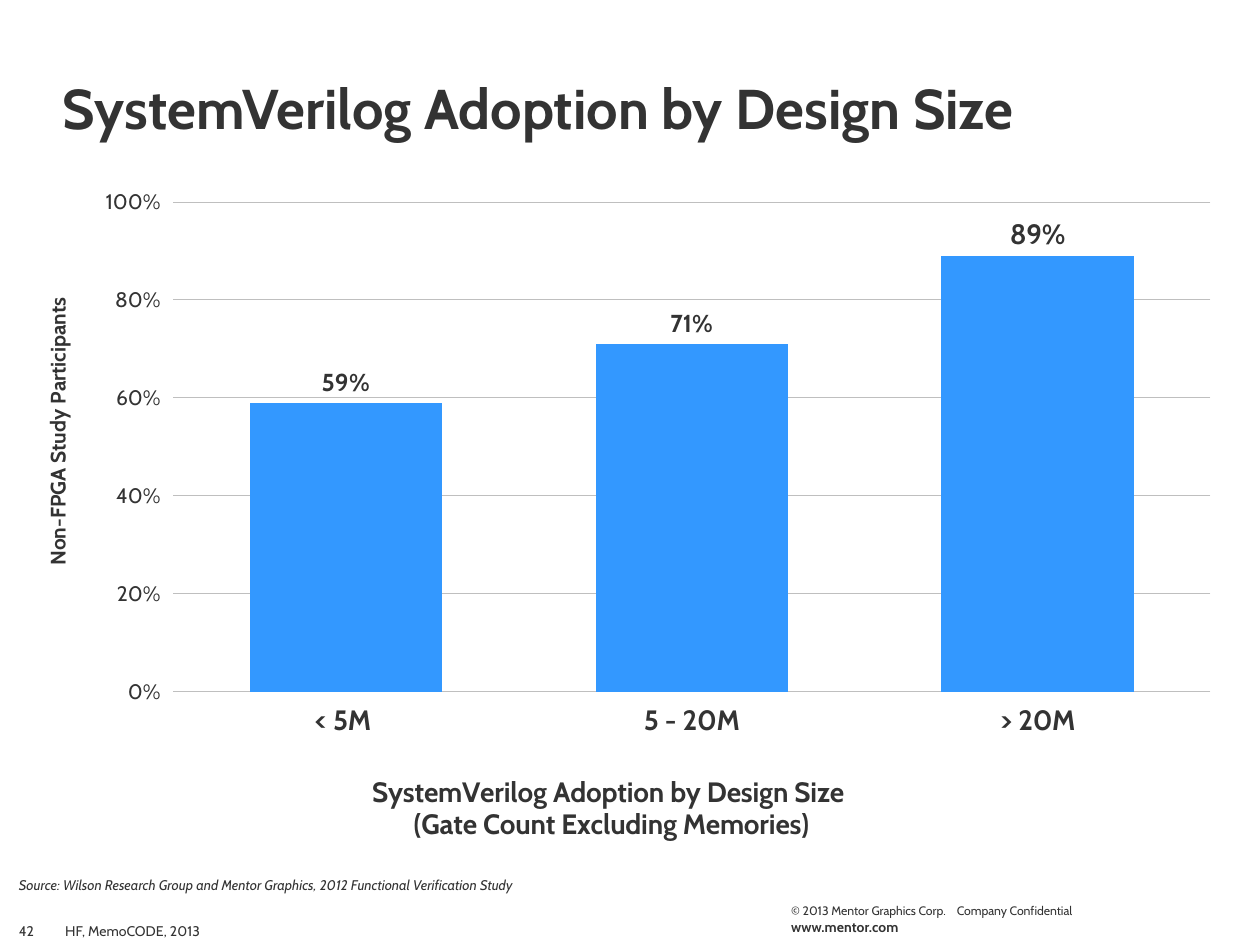
from dataclasses import dataclass

from lxml.etree import SubElement
from pptx import Presentation
from pptx.chart.data import CategoryChartData
from pptx.dml.color import RGBColor
from pptx.enum.chart import XL_CHART_TYPE as ChartType, XL_LABEL_POSITION as LabelPos
from pptx.enum.text import MSO_ANCHOR as Anchor, PP_ALIGN as Align
from pptx.oxml.ns import qn
from pptx.util import Pt

FONT = "Cabin"
COLORS = {"text": "333333", "bar": "3398FF", "grid": "BFBFBF"}


@dataclass
class Label:
    text: str
    left: float
    top: float
    width: float
    height: float
    size: float = 8
    bold: bool = False
    italic: bool = False
    anchor: Anchor = Anchor.BOTTOM
    align: Align = Align.LEFT
    inset: float = 7.2


LABELS = [
    Label("www.mentor.com", 445, 521.3, 113.8, 16.6, bold=True, anchor=Anchor.TOP),
    Label("© 2013 Mentor Graphics Corp.    Company Confidential", 445, 512.6, 190.8, 15.8,
          size=7, anchor=Anchor.TOP),
    Label("SystemVerilog Adoption by Design Size", 0, 0, 720, 84.2,
          size=32, bold=True, inset=36),
    Label("Source: Wilson Research Group and Mentor Graphics, 2012 Functional Verification Study",
          0, 496.8, 426.2, 17.3, italic=True, inset=10.8),
    Label("HF, MemoCODE, 2013", 30.2, 522, 410.4, 18),
    Label("42", 0, 522, 30.2, 18, align=Align.CENTER),
]


def rgb(name: str) -> RGBColor:
    return RGBColor.from_string(COLORS[name])


def style_font(font, size: float, bold: bool = False, italic: bool = False) -> None:
    font.name, font.size, font.bold, font.italic = FONT, Pt(size), bold, italic
    font.color.rgb = rgb("text")


def add_label(slide, label: Label) -> None:
    box = slide.shapes.add_textbox(Pt(label.left), Pt(label.top), Pt(label.width), Pt(label.height))
    tf = box.text_frame
    tf.word_wrap = True
    tf.vertical_anchor = label.anchor
    tf.margin_left = tf.margin_right = Pt(label.inset)
    p = tf.paragraphs[0]
    p.text = label.text
    p.alignment = label.align
    style_font(p.font, label.size, label.bold, label.italic)


def set_layout(element, index: int, **values) -> None:
    """Place a chart part by fractions of the chart's size."""
    for old in element.findall(qn("c:layout")):
        element.remove(old)
    layout = SubElement(element, qn("c:layout"))
    element.insert(index, layout)
    manual = SubElement(layout, qn("c:manualLayout"))
    for tag, value in values.items():
        SubElement(manual, qn(f"c:{tag}")).set("val", str(value))


def set_axis_title(axis, lines: list[str], size: float, x: float, y: float):
    title = axis.axis_title
    tf = title.text_frame
    tf.text = "\n".join(lines)
    for p in tf.paragraphs:
        p.alignment = Align.CENTER
        style_font(p.font, size, bold=True)
    set_layout(title._element, 1, xMode="edge", yMode="edge", x=x, y=y)
    return tf


def add_adoption_chart(slide) -> None:
    data = CategoryChartData(number_format="0%")
    data.categories = ["< 5M ", "5 - 20M", "> 20M"]
    data.add_series("Series 1", [0.59, 0.71, 0.89])
    chart = slide.shapes.add_chart(ChartType.COLUMN_CLUSTERED, Pt(12.2), Pt(100.8),
                                   Pt(693.4), Pt(385.2), data).chart
    chart.has_legend = chart.has_title = False
    style_font(chart.font, 10)
    plot_area = chart._chartSpace.chart.plotArea
    set_layout(plot_area, 0, layoutTarget="inner", xMode="edge", yMode="edge",
               x=0.125, y=0.038, w=0.855, h=0.727)

    cat, val = chart.category_axis, chart.value_axis
    for axis, size, bold in ((cat, 16, True), (val, 12, False)):
        axis.format.line.fill.background()
        style_font(axis.tick_labels.font, size, bold)
    val.minimum_scale, val.maximum_scale, val.major_unit = 0, 1, 0.2
    val.tick_labels.number_format = "0%"
    val.tick_labels.number_format_is_linked = False
    grid = val.major_gridlines.format.line
    grid.width = Pt(0.5)
    grid.color.rgb = rgb("grid")
    set_axis_title(cat, ["SystemVerilog Adoption by Design Size ",
                         "(Gate Count Excluding Memories)"], 16, 0.286, 0.88)
    tf = set_axis_title(val, ["Non-FPGA Study Participants"], 12, 0.015, 0.174)
    tf._txBody.bodyPr.set("rot", "-5400000")
    tf._txBody.bodyPr.set("vert", "horz")

    plot = chart.plots[0]
    plot.gap_width = 80
    plot.vary_by_categories = False
    series = plot.series[0]
    series.format.fill.solid()
    series.format.fill.fore_color.rgb = rgb("bar")
    labels = series.data_labels
    labels.show_value = True
    labels.number_format = "0%"
    labels.number_format_is_linked = False
    labels.position = LabelPos.OUTSIDE_END
    style_font(labels.font, 14, bold=True)
    top_label = series.points[2].data_label
    style_font(top_label.font, 16, bold=True)
    top_label.position = LabelPos.OUTSIDE_END


def main() -> None:
    prs = Presentation()
    prs.slide_width, prs.slide_height = Pt(720), Pt(540)
    slide = prs.slides.add_slide(prs.slide_layouts[6])
    add_adoption_chart(slide)
    for label in LABELS:
        add_label(slide, label)
    prs.save("out.pptx")


if __name__ == "__main__":
    main()
